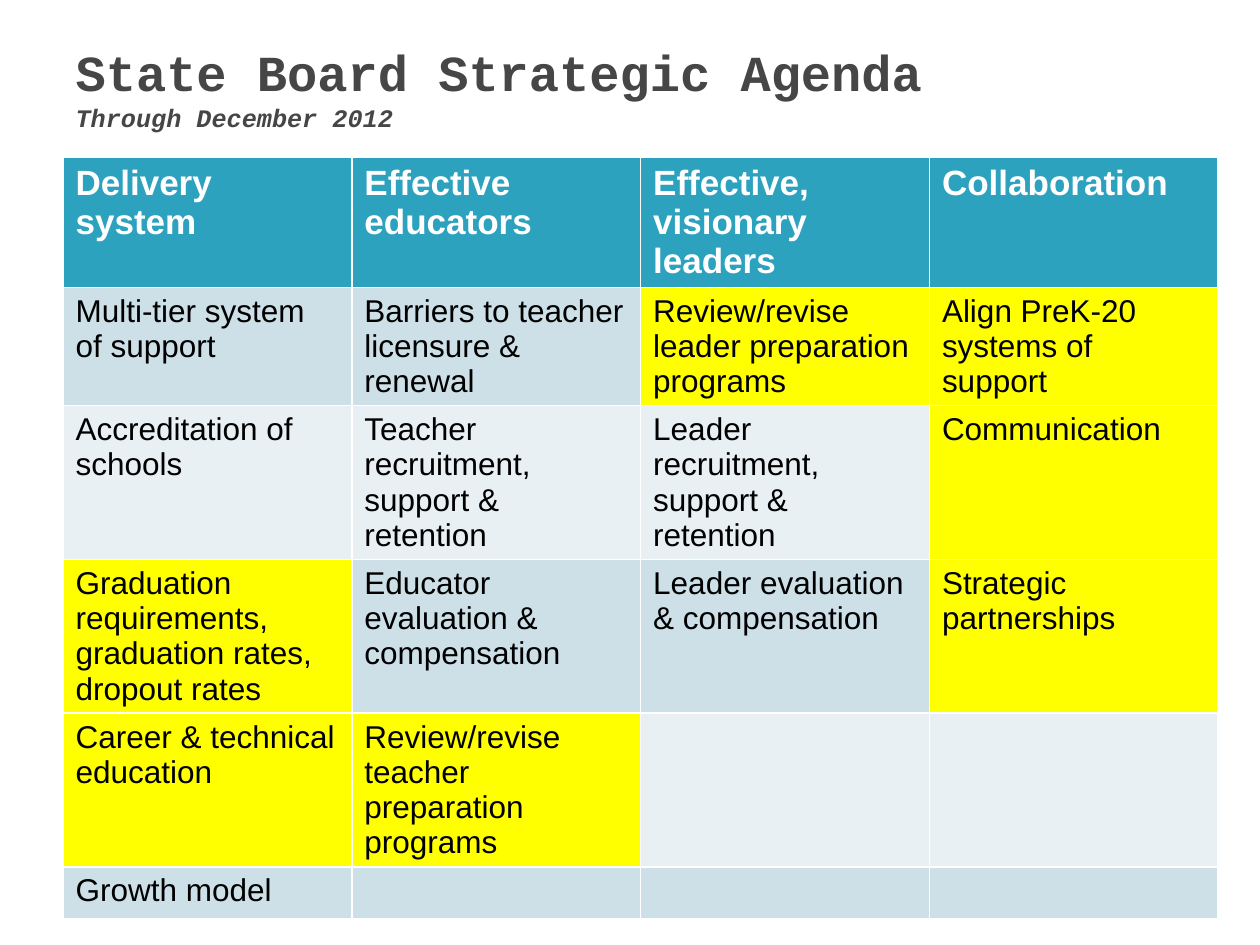
from pptx import Presentation
from pptx import util as u
from pptx.dml.color import RGBColor
from pptx.enum import text

COLORS = {"title": "464646", "header": "2DA2BF", "header_text": "FFFFFF", "body_text": "000000",
          "band_dark": "CDE0E8", "band_light": "E8F0F4", "highlight": "FFFF00"}

AGENDA = [
    ["Delivery system", "Effective educators", "Effective, visionary leaders", "Collaboration"],
    ["Multi-tier system of support", "Barriers to teacher licensure & renewal",
     "Review/revise leader preparation programs", "Align PreK-20 systems of support"],
    ["Accreditation of schools", "Teacher recruitment, support & retention",
     "Leader recruitment, support & retention", "Communication"],
    ["Graduation requirements, graduation rates, dropout rates",
     "Educator evaluation & compensation", "Leader evaluation & compensation",
     "Strategic partnerships"],
    ["Career & technical education", "Review/revise teacher preparation programs", "", ""],
    ["Growth model", "", "", ""],
]
HIGHLIGHTED = {(1, 2), (1, 3), (2, 3), (3, 0), (3, 3), (4, 0), (4, 1)}


def add_run(p, words, color, **fmt):
    r = p.add_run()
    r.text = words
    r.font.color.rgb = RGBColor.from_string(COLORS[color])
    for name, value in fmt.items():
        setattr(r.font, name, value)


prs = Presentation()
prs.slide_width, prs.slide_height = u.Inches(10), u.Inches(7.5)
W, H = prs.slide_width, prs.slide_height
s = prs.slides.add_slide(prs.slide_layouts[5])

# Title and subtitle
title = s.shapes.title
title.left, title.top = int(W * 0.05), int(H * 0.04)
title.width, title.height = int(W * 0.9), u.Inches(0.78)
tf = title.text_frame
tf.word_wrap = True
tf.auto_size = text.MSO_AUTO_SIZE.NONE
tf.vertical_anchor = text.MSO_ANCHOR.MIDDLE
p = tf.paragraphs[0]
p.alignment = text.PP_ALIGN.LEFT
fmt = {"name": "Courier New", "bold": True}
add_run(p, "State Board Strategic Agenda", "title", size=u.Pt(28.8), **fmt)
p.add_line_break()
add_run(p, "Through December 2012", "title", size=u.Pt(14.4), italic=True, **fmt)

# Agenda table: rows grow to fit their text
frame = s.shapes.add_table(len(AGENDA), len(AGENDA[0]), int(W * 0.05), int(H / 6),
                           u.Inches(9.17), u.Inches(6.71))
table = frame.table
for row in table.rows:
    row.height = u.Inches(0.41)

for i, labels in enumerate(AGENDA):
    header = i == 0
    band = "header" if header else "band_dark" if i % 2 else "band_light"
    for j, label in enumerate(labels):
        cell = table.cell(i, j)
        cell.fill.solid()
        fill = "highlight" if (i, j) in HIGHLIGHTED else band
        cell.fill.fore_color.rgb = RGBColor.from_string(COLORS[fill])
        if label:
            add_run(cell.text_frame.paragraphs[0], label,
                    "header_text" if header else "body_text",
                    name="Arial", size=u.Pt(20 if header else 18), bold=header)

prs.save("out.pptx")
